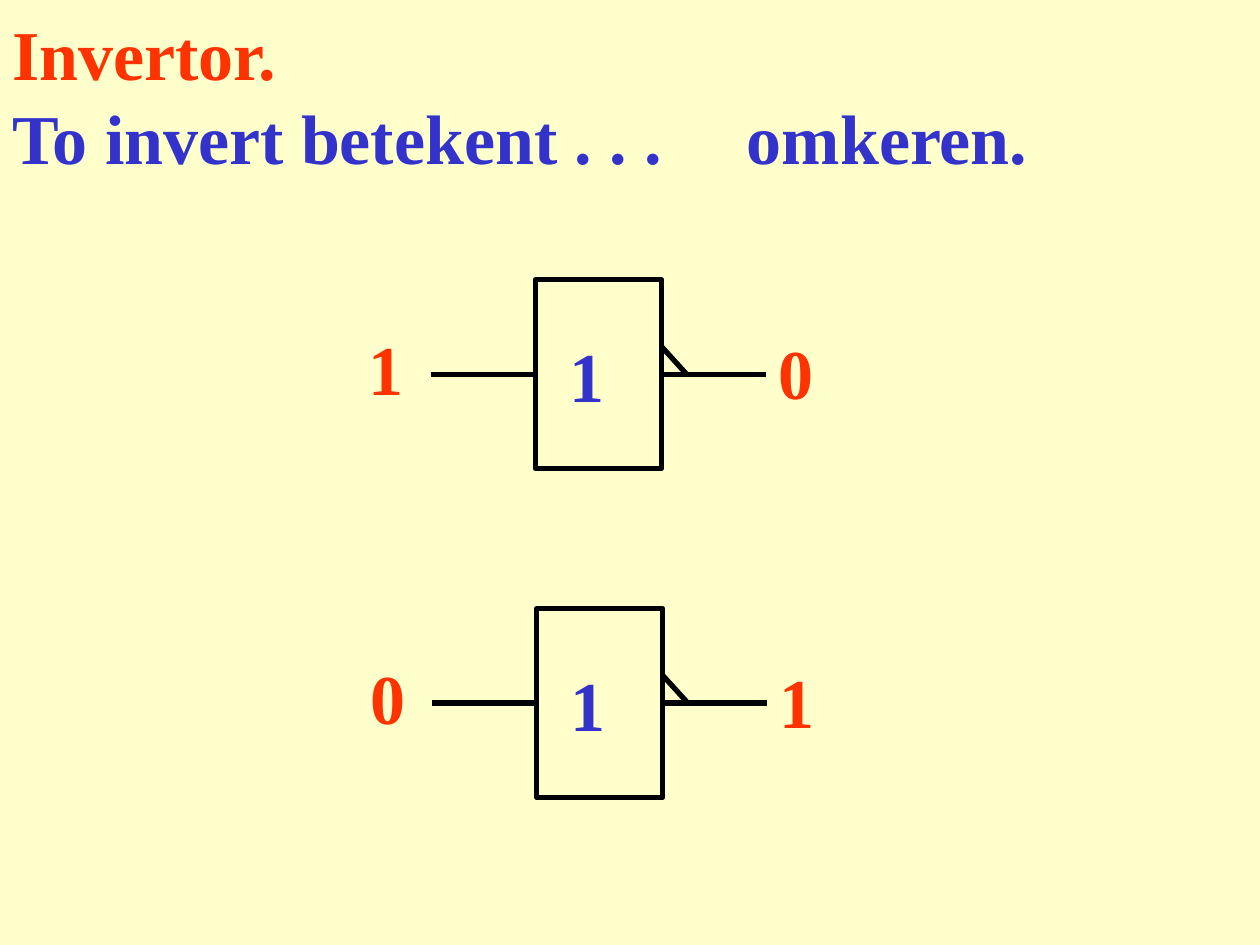
from pptx import Presentation
from pptx.dml.color import RGBColor
from pptx.enum.shapes import MSO_CONNECTOR, MSO_SHAPE
from pptx.enum.text import MSO_ANCHOR, MSO_AUTO_SIZE, PP_ALIGN
from pptx.oxml.ns import qn
from pptx.util import Inches, Pt
from lxml import etree

LINE = MSO_CONNECTOR.STRAIGHT
RECT = MSO_SHAPE.RECTANGLE
FRAME = {"word_wrap": True, "auto_size": MSO_AUTO_SIZE.NONE,
         "vertical_anchor": MSO_ANCHOR.MIDDLE}
FONT = {"name": "Times New Roman", "size": Pt(40), "bold": True}
COLORS = {"page": "FFFFCC", "red": "FF3300", "blue": "3333CC", "ink": "000000"}


def color(name):
    return RGBColor.from_string(COLORS[name])


def put(item, values):
    for key, value in values.items():
        setattr(item, key, value)


def write(shape, text, tone):
    frame = shape.text_frame
    put(frame, FRAME)
    para = frame.paragraphs[0]
    para.alignment = PP_ALIGN.LEFT
    run = para.add_run()
    run.text = text
    put(run.font, FONT)
    run.font.color.rgb = color(tone)


def label(shapes, box, text, tone):
    write(shapes.add_textbox(*map(Inches, box)), text, tone)


def ink(shape):
    shape.line.color.rgb = color("ink")
    shape.line.width = Pt(3)


def wire(shapes, x, y, size):
    line = shapes.add_connector(LINE, *map(Inches, (x, y, x + size, y)))
    ink(line)
    etree.SubElement(line._element.spPr, qn("a:effectLst"))


def outline(shape):
    shape.shadow.inherit = False
    shape.fill.background()
    ink(shape)


def heading(slide, x, y):
    title = slide.shapes.title
    put(title, {"left": Inches(x), "top": Inches(y),
                "width": Inches(5.42), "height": Inches(0.83)})
    write(title, "Invertor.", "red")
    label(slide.shapes, (x, y + 0.67, 5.92, 0.83), "To invert betekent . . .", "blue")
    label(slide.shapes, (x + 5.83, y + 0.67, 2.75, 0.83), "omkeren.", "blue")


def gate(slide, x, y, given, result):
    # Input and output values
    label(slide.shapes, (x, y + 0.2, 0.83, 1), given, "red")
    label(slide.shapes, (x + 3.25, y + 0.23, 1.58, 1), result, "red")

    # Gate symbol with its wires
    parts = slide.shapes.add_group_shape().shapes
    left, right, mid = x + 1.42, x + 2.42, y + 0.75
    label(parts, (left + 0.17, y + 0.25, 0.67, 1), "1", "blue")
    outline(parts.add_shape(RECT, *map(Inches, (left, y, 1, 1.5))))
    wire(parts, right, mid, 0.83)
    wire(parts, left - 0.83, mid, 0.83)

    # Inversion mark
    path = parts.build_freeform(Inches(right), Inches(mid - 0.22))
    path.add_line_segments([(Inches(right + 0.2), Inches(mid))], close=False)
    outline(path.convert_to_shape())


def main():
    deck = Presentation()
    deck.slide_width, deck.slide_height = Inches(10), Inches(7.5)
    slide = deck.slides.add_slide(deck.slide_layouts[5])
    fill = slide.background.fill
    fill.solid()
    fill.fore_color.rgb = color("page")

    heading(slide, 0, 0)
    gate(slide, 2.83, 2.22, "1", "0")
    gate(slide, 2.84, 4.83, "0", "1")
    deck.save("out.pptx")


if __name__ == "__main__":
    main()
